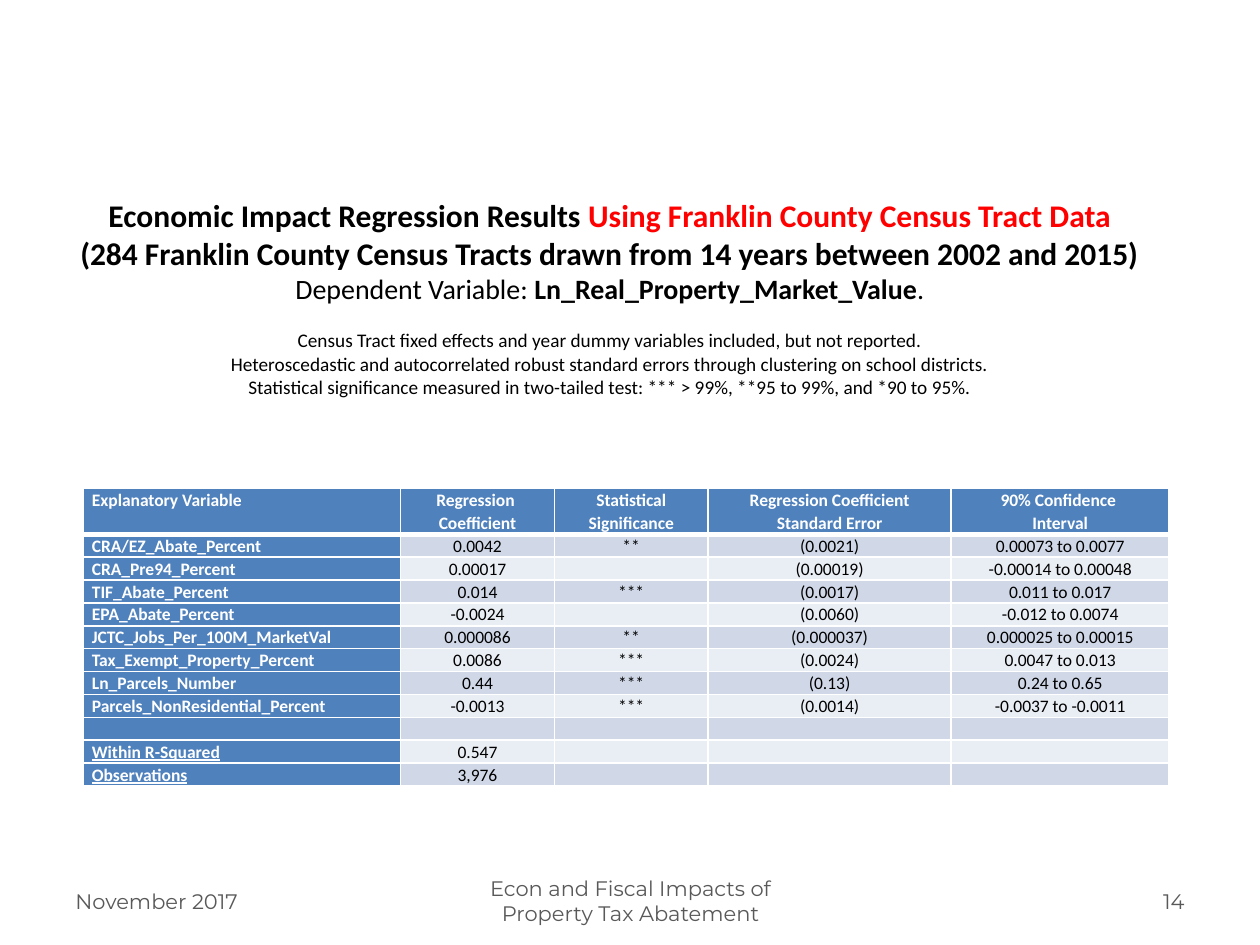
from lxml import etree
from pptx import Presentation
from pptx.dml.color import RGBColor
from pptx.enum.text import MSO_ANCHOR, PP_ALIGN
from pptx.oxml.ns import qn
from pptx.util import Inches, Pt

LEFT, CENTER, RIGHT = PP_ALIGN.LEFT, PP_ALIGN.CENTER, PP_ALIGN.RIGHT
TOP, MIDDLE = MSO_ANCHOR.TOP, MSO_ANCHOR.MIDDLE
WIDTH, HEIGHT = 10, 7.5
BODY_FONT, FOOTER_FONT = "Calibri", "Montserrat"
COLORS = {
    "text": "000000",
    "accent": "FF0000",
    "footer": "595959",
    "header": "4F81BD",
    "odd": "D0D8E8",
    "even": "E9EDF4",
    "white": "FFFFFF",
}
COLUMNS = [2.52, 1.22, 1.22, 1.93, 1.73]
HEADINGS = [
    "Explanatory Variable",
    "Regression \nCoefficient",
    "Statistical Significance",
    "Regression Coefficient Standard Error",
    "90% Confidence \nInterval",
]
RESULTS = [
    ["CRA/EZ_Abate_Percent", "0.0042", "**", "(0.0021)", "0.00073 to 0.0077"],
    ["CRA_Pre94_Percent", "0.00017", "", "(0.00019)", "-0.00014 to 0.00048"],
    ["TIF_Abate_Percent", "0.014", "***", "(0.0017)", "0.011 to 0.017"],
    ["EPA_Abate_Percent", "-0.0024", "", "(0.0060)", "-0.012 to 0.0074"],
    ["JCTC_Jobs_Per_100M_MarketVal", "0.000086", "**", "(0.000037)", "0.000025 to 0.00015"],
    ["Tax_Exempt_Property_Percent", "0.0086", "***", "(0.0024)", "0.0047 to 0.013"],
    ["Ln_Parcels_Number", "0.44", "***", "(0.13)", "0.24 to 0.65"],
    ["Parcels_NonResidential_Percent", "-0.0013", "***", "(0.0014)", "-0.0037 to -0.0011"],
    [""] * 5,
    ["Within R-Squared", "0.547", "", "", ""],
    ["Observations", "3,976", "", "", ""],
]
SUMMARY_LABELS = {"Within R-Squared", "Observations"}
TITLE_LINES = [
    (18, [("Economic Impact Regression Results ", True, "text"),
          ("Using Franklin County Census Tract Data", True, "accent")]),
    (18, [("(284 Franklin County Census Tracts drawn from 14 years between 2002 and 2015)", True, "text")]),
    (16, [("Dependent Variable: ", False, "text"),
          ("Ln_Real_Property_Market_Value", True, "text"), (".", False, "text")]),
]
NOTES = [
    "Census Tract fixed effects and year dummy variables included, but not reported.",
    "Heteroscedastic and autocorrelated robust standard errors through clustering on school districts.",
    "Statistical significance measured in two-tailed test: *** > 99%, **95 to 99%, and *90 to 95%.",
]
FOOTERS = [
    ("November 2017", 0.05, 0.233, LEFT),
    ("Econ and Fiscal Impacts of Property Tax Abatement", 0.342, 0.317, CENTER),
    ("14", 0.717, 0.233, RIGHT),
]


def color(name):
    """Return the named colour."""
    return RGBColor.from_string(COLORS[name])


def place(box):
    """Turn shares of the slide into left, top, width and height."""
    left, top, width, height = box
    return Inches(left * WIDTH), Inches(top * HEIGHT), Inches(width * WIDTH), Inches(height * HEIGHT)


def style(paragraph, font_name, size, color_name, alignment, bold=False):
    """Format a whole paragraph."""
    paragraph.alignment = alignment
    font = paragraph.font
    font.name, font.size, font.bold = font_name, Pt(size), bold
    font.color.rgb = color(color_name)


def add_text_frame(slide, box, anchor, wrap):
    """Add a text box and return its frame."""
    frame = slide.shapes.add_textbox(*place(box)).text_frame
    frame.word_wrap = wrap
    frame.vertical_anchor = anchor
    return frame


def add_title(slide, box):
    """Write the heading lines and the method notes below them."""
    frame = add_text_frame(slide, box, TOP, False)
    lines = TITLE_LINES + [(11, [(note, False, "text")]) for note in NOTES]
    for index, (size, runs) in enumerate(lines):
        paragraph = frame.add_paragraph() if index else frame.paragraphs[0]
        style(paragraph, BODY_FONT, size, "text", CENTER)
        if index == len(TITLE_LINES):
            paragraph.space_before = Pt(13.4)
        for text, bold, color_name in runs:
            run = paragraph.add_run()
            run.text = text
            run.font.bold = bold
            run.font.color.rgb = color(color_name)


def set_borders(cell, bottom_width):
    """Draw white lines around a cell."""
    properties = cell._tc.get_or_add_tcPr()
    widths = {"a:lnL": 1, "a:lnR": 1, "a:lnT": 1, "a:lnB": bottom_width}
    for index, (tag, width) in enumerate(widths.items()):
        line = etree.Element(qn(tag), w=str(Pt(width)))
        fill = etree.SubElement(line, qn("a:solidFill"))
        etree.SubElement(fill, qn("a:srgbClr"), val=COLORS["white"])
        properties.insert(index, line)


def fill_cell(cell, text, row, column):
    """Write and format one table cell."""
    is_heading = row == 0 or column == 0
    cell.text = text
    cell.margin_left = cell.margin_right = Inches(0.07)
    cell.margin_top = cell.margin_bottom = 0
    cell.fill.solid()
    cell.fill.fore_color.rgb = color("header" if is_heading else "odd" if row % 2 else "even")
    set_borders(cell, 1 if row else 3)
    for paragraph in cell.text_frame.paragraphs:
        style(paragraph, BODY_FONT, 10, "white" if is_heading else "text",
              CENTER if column else LEFT, is_heading)
        paragraph.line_spacing = 1.07
        if text in SUMMARY_LABELS:
            paragraph.font.underline = True
        if not text:
            paragraph._p.get_or_add_endParaRPr().set("sz", "1000")


def add_results_table(slide, box):
    """Place the regression table with a header two rows high."""
    rows = [HEADINGS] + RESULTS
    left, top, width, height = place(box)
    table = slide.shapes.add_table(len(rows), len(COLUMNS), left, top, width, height).table
    row_height = height // (len(rows) + 1)
    for column, share in enumerate(COLUMNS):
        table.columns[column].width = int(width * share / sum(COLUMNS))
    for row, texts in enumerate(rows):
        table.rows[row].height = row_height if row else 2 * row_height
        for column, text in enumerate(texts):
            fill_cell(table.cell(row, column), text, row, column)


def add_footer(slide, top, height):
    """Place the date, the footer text and the slide number."""
    for text, left, width, alignment in FOOTERS:
        frame = add_text_frame(slide, (left, top, width, height), MIDDLE, True)
        frame.text = text
        style(frame.paragraphs[0], FOOTER_FONT, 12, "footer", alignment)


def main():
    """Build and save the slide."""
    presentation = Presentation()
    presentation.slide_width, presentation.slide_height = Inches(WIDTH), Inches(HEIGHT)
    slide = presentation.slides.add_slide(presentation.slide_layouts[6])
    add_footer(slide, 0.927, 0.053)
    add_results_table(slide, (0.066, 0.517, 0.862, 0.315))
    add_title(slide, (0.05, 0.201, 0.868, 0.269))
    presentation.save("out.pptx")


if __name__ == "__main__":
    main()
